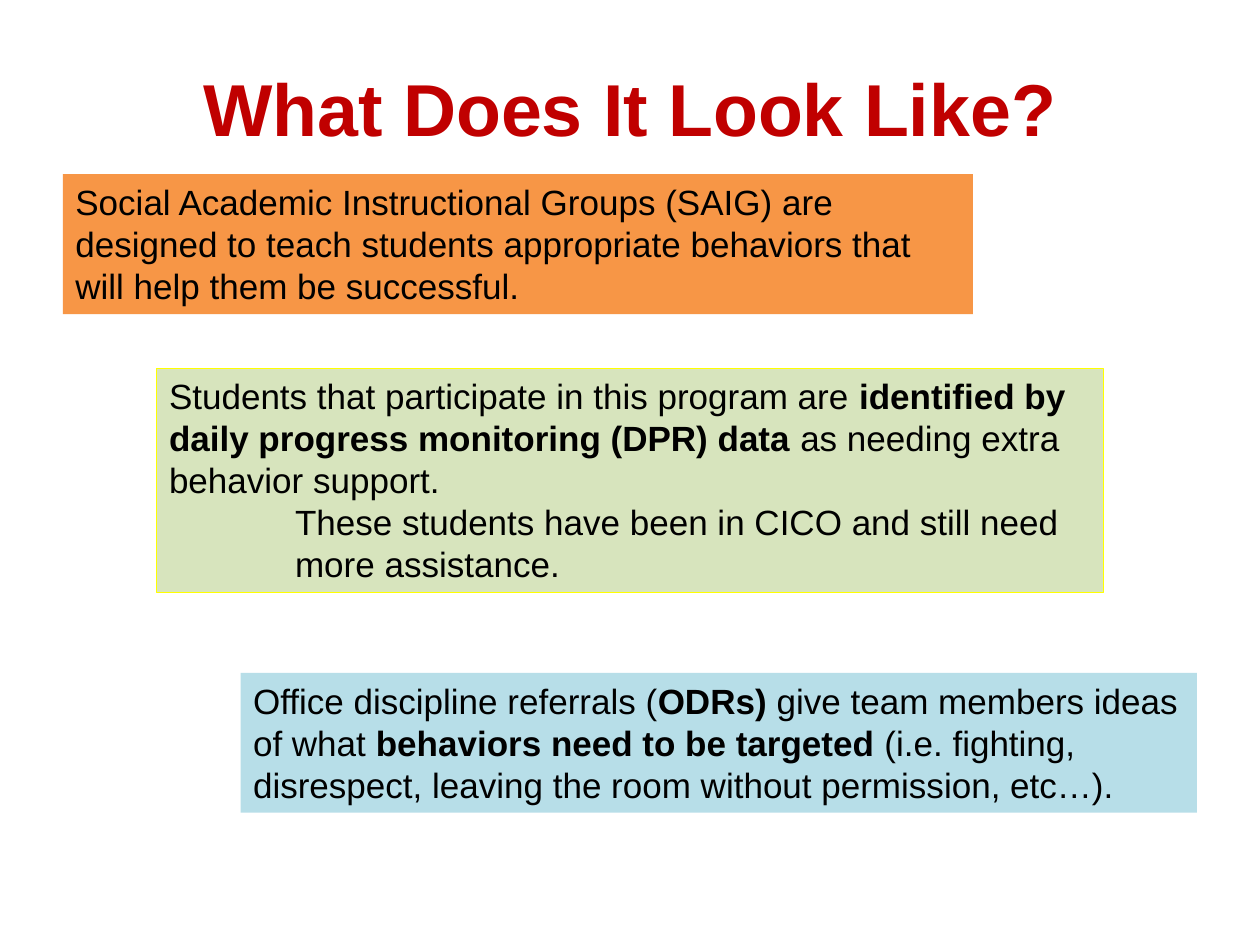
from pptx import Presentation
from pptx.dml.color import RGBColor
from pptx.enum.shapes import MSO_SHAPE as Shape
from pptx.enum.text import MSO_ANCHOR as Anchor, PP_ALIGN as Align
from pptx.util import Pt


def color(hex_code):
    return RGBColor.from_string(hex_code)


def write(paragraph, *runs, size=20, ink="000000", align=Align.LEFT, indent=0):
    """Fill a paragraph with (text, bold) runs; indent is its left margin."""
    if indent:
        paragraph._p.get_or_add_pPr().set("marL", str(Pt(indent)))
    paragraph.alignment = align
    for text, bold in runs:
        run = paragraph.add_run()
        run.text = text
        run.font.name = "Arial"
        run.font.size = Pt(size)
        run.font.bold = bold
        run.font.color.rgb = color(ink)


def add_title(slide, text):
    title = slide.shapes.add_textbox(Pt(36), Pt(36), Pt(648), Pt(51))
    frame = title.text_frame
    frame.word_wrap = True
    frame.margin_left = frame.margin_right = 0
    frame.margin_top = frame.margin_bottom = 0
    write(frame.paragraphs[0], (text, True), size=42, ink="C00000",
          align=Align.CENTER)


def add_panel(slide, left, top, width, height, fill, border=None):
    """Add a coloured panel and return its text frame."""
    panel = slide.shapes.add_shape(Shape.RECTANGLE, Pt(left), Pt(top),
                                   Pt(width), Pt(height))
    panel.shadow.inherit = False
    panel.fill.solid()
    panel.fill.fore_color.rgb = color(fill)
    if border:
        panel.line.color.rgb = color(border)
        panel.line.width = Pt(0.75)
    else:
        panel.line.fill.background()
    frame = panel.text_frame
    frame.word_wrap = True
    frame.vertical_anchor = Anchor.TOP
    return frame


def main():
    prs = Presentation()
    prs.slide_width, prs.slide_height = Pt(720), Pt(540)
    slide = prs.slides.add_slide(prs.slide_layouts[6])

    # What the groups are
    purpose = add_panel(slide, 36, 99.5, 520, 80, "F79646")
    write(purpose.paragraphs[0],
          ("Social Academic Instructional Groups (SAIG) are designed to teach "
           "students appropriate behaviors that will help them be successful.",
           False))

    # Who takes part
    students = add_panel(slide, 89.5, 210.5, 541, 128, "D7E4BD", border="FFFF00")
    write(students.paragraphs[0],
          ("Students that participate in this program are ", False),
          ("identified by daily progress monitoring (DPR) data", True),
          (" as needing extra behavior support.", False))
    write(students.add_paragraph(),
          ("These students have been in CICO and still need more assistance.",
           False), indent=72)

    # Which behaviors are targeted
    referrals = add_panel(slide, 137.5, 384.5, 546.5, 80, "B7DEE8")
    write(referrals.paragraphs[0],
          ("Office discipline referrals (", False),
          ("ODRs)", True),
          (" give team members ideas of what ", False),
          ("behaviors need to be targeted ", True),
          ("(i.e. fighting, disrespect, leaving the room without permission, "
           "etc…).", False))

    add_title(slide, "What Does It Look Like?")
    prs.save("out.pptx")


if __name__ == "__main__":
    main()
